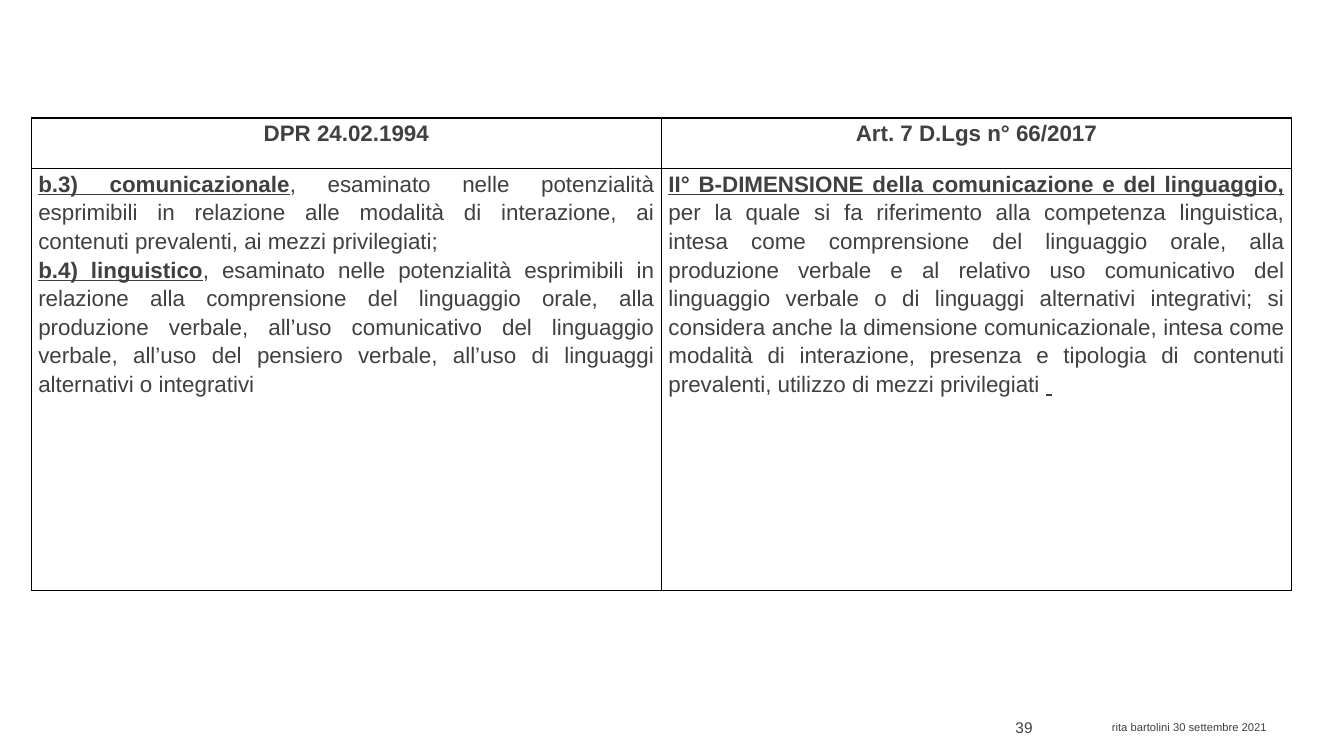
"""Build a slide comparing two Italian legal texts in a bordered table."""
from lxml import etree
from pptx import Presentation
from pptx import util as u
from pptx.dml.color import RGBColor
from pptx.enum import text
from pptx.oxml import ns

GREY = RGBColor(0x40, 0x40, 0x40)
BLACK = RGBColor(0, 0, 0)
FONT = "Arial"
HEADINGS = ["DPR 24.02.1994", "Art. 7 D.Lgs n° 66/2017"]
PROVISIONS = [
    [
        [("b.3) comunicazionale", True),
         (", esaminato nelle potenzialità esprimibili in relazione alle modalità "
          "di interazione, ai contenuti prevalenti, ai mezzi privilegiati;", False)],
        [("b.4) linguistico", True),
         (", esaminato nelle potenzialità esprimibili in relazione alla "
          "comprensione del linguaggio orale, alla produzione verbale, all’uso "
          "comunicativo del linguaggio verbale, all’uso del pensiero verbale, "
          "all’uso di linguaggi alternativi o integrativi", False)],
    ],
    [
        [("II° B-DIMENSIONE della comunicazione e del linguaggio, ", True),
         ("per la quale si fa riferimento alla competenza linguistica, intesa come "
          "comprensione del linguaggio orale, alla produzione verbale e al relativo "
          "uso comunicativo del linguaggio verbale o di linguaggi alternativi "
          "integrativi; si considera anche la dimensione comunicazionale, intesa "
          "come modalità di interazione, presenza e tipologia di contenuti "
          "prevalenti, utilizzo di mezzi privilegiati ", False),
         (" ", True)],
    ],
]
COLUMN_WIDTH = 6.25
ROW_HEIGHTS = [0.5, 4.19]
FOOTERS = [
    ("39", (9.42, 7.02, 0.92, 0.4), 11, text.PP_ALIGN.RIGHT, text.MSO_ANCHOR.MIDDLE),
    ("rita bartolini 30 settembre 2021", (10.93, 7.1, 2.4, 0.4), 8,
     text.PP_ALIGN.LEFT, text.MSO_ANCHOR.TOP),
]


def write(frame, paragraphs, size=16, align=text.PP_ALIGN.LEFT, spacing=1.0,
          bold=False, underline=False):
    """Fill a frame; emphasised spans take the bold and underline settings."""
    frame.word_wrap = True
    for index, spans in enumerate(paragraphs):
        para = frame.add_paragraph() if index else frame.paragraphs[0]
        para.alignment = align
        para.line_spacing = spacing
        for words, emphasised in spans:
            span = para.add_run()
            span.text = words
            span.font.name = FONT
            span.font.size = u.Pt(size)
            span.font.color.rgb = GREY
            span.font.bold = bold and emphasised
            span.font.underline = underline and emphasised


def style_cell(cell):
    """Give a cell narrow margins, thin black borders and no fill."""
    cell.margin_left = cell.margin_right = u.Inches(0.07)
    cell.margin_top = cell.margin_bottom = 0
    properties = cell._tc.get_or_add_tcPr()
    for side in ("a:lnL", "a:lnR", "a:lnT", "a:lnB"):
        border = etree.SubElement(properties, ns.qn(side), w=str(u.Pt(1)))
        fill = etree.SubElement(border, ns.qn("a:solidFill"))
        etree.SubElement(fill, ns.qn("a:srgbClr"), val=str(BLACK))
    cell.fill.background()


def add_comparison(page):
    """Add the two-column table of provisions."""
    table = page.shapes.add_table(
        len(ROW_HEIGHTS), len(HEADINGS), u.Inches(0.31), u.Inches(1.17),
        u.Inches(COLUMN_WIDTH * len(HEADINGS)), u.Inches(sum(ROW_HEIGHTS))).table
    table.first_row = table.horz_banding = False
    for row, height in zip(table.rows, ROW_HEIGHTS):
        row.height = u.Inches(height)
    for column, (heading, provision) in enumerate(zip(HEADINGS, PROVISIONS)):
        table.columns[column].width = u.Inches(COLUMN_WIDTH)
        top, body = table.cell(0, column), table.cell(1, column)
        for cell in (top, body):
            style_cell(cell)
        write(top.text_frame, [[(heading, True)]], align=text.PP_ALIGN.CENTER,
              spacing=1.15, bold=True)
        write(body.text_frame, provision, align=text.PP_ALIGN.JUSTIFY,
              spacing=1.15, bold=True, underline=True)


def main():
    """Assemble and save the deck."""
    deck = Presentation()
    deck.slide_width, deck.slide_height = u.Inches(13.33), u.Inches(7.5)
    page = deck.slides.add_slide(deck.slide_layouts[6])
    add_comparison(page)
    for words, place, size, align, anchor in FOOTERS:
        box = page.shapes.add_textbox(*map(u.Inches, place))
        box.text_frame.vertical_anchor = anchor
        write(box.text_frame, [[(words, False)]], size=size, align=align)
    deck.save("out.pptx")


if __name__ == "__main__":
    main()
